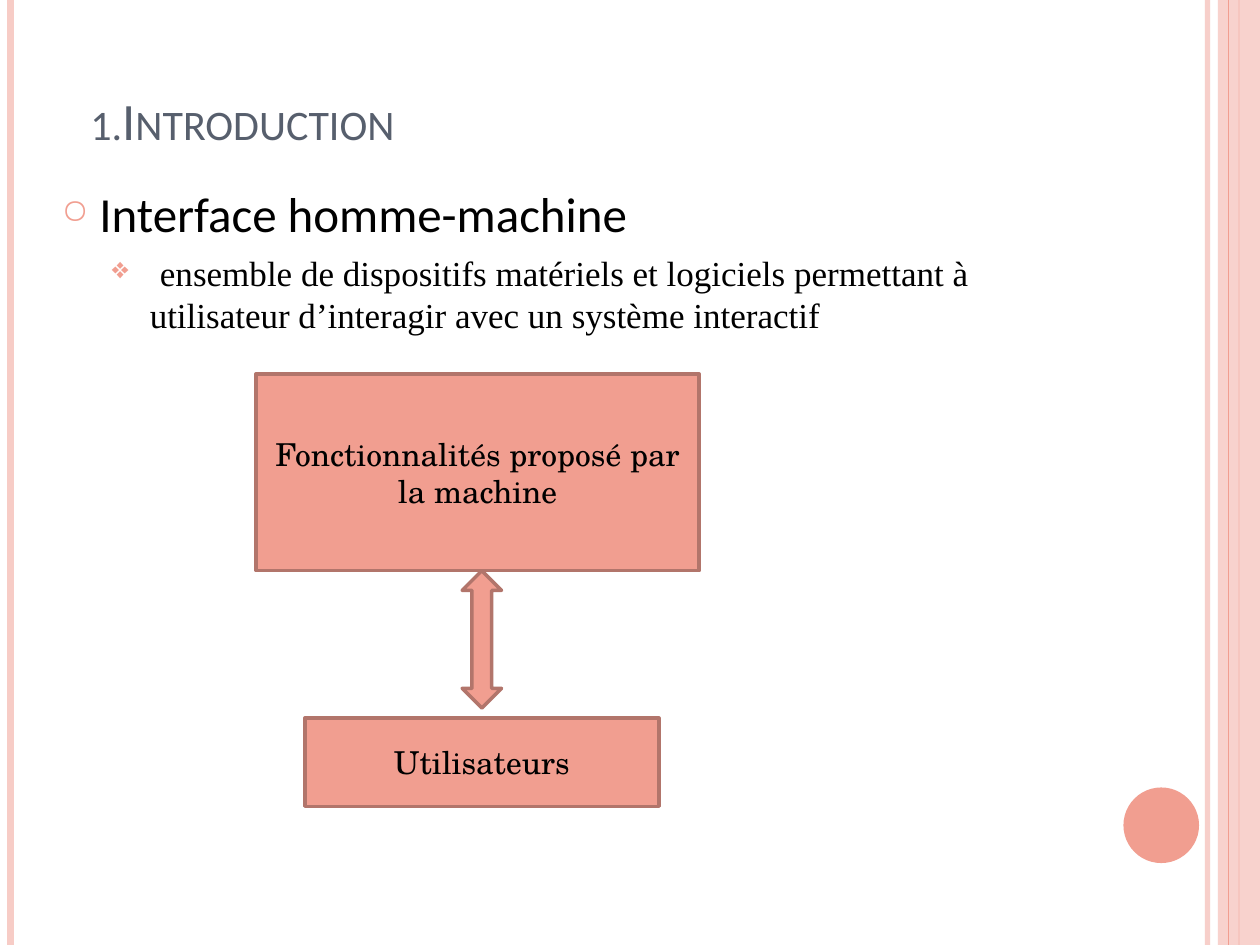
from dataclasses import dataclass
from typing import NamedTuple

import pptx
import pptx.dml.color
import pptx.enum.shapes
import pptx.enum.text
import pptx.oxml.ns
import pptx.util
from lxml import etree

Pt = pptx.util.Pt
RGB = pptx.dml.color.RGBColor.from_string
Shapes = pptx.enum.shapes.MSO_SHAPE
Anchor = pptx.enum.text.MSO_ANCHOR
qn = pptx.oxml.ns.qn


@dataclass(frozen=True)
class Theme:
    coral: str = "F19E90"
    pale: str = "F7CCC6"
    outline: str = "B2756B"
    heading: str = "575F6D"
    ink: str = "000000"
    white: str = "FFFFFF"
    sans: str = "Calibri"
    serif: str = "Times New Roman"
    school: str = "TeX Gyre Schola"
    title_size: int = 30
    topic_size: int = 28
    detail_size: int = 20
    gap_size: int = 21
    label_size: int = 18


class Box(NamedTuple):
    left: float
    top: float
    width: float
    height: float

    def lengths(self):
        return [Pt(value) for value in self]


THEME = Theme()


def add_element(parent, tag, **attributes):
    return etree.SubElement(parent, qn(tag), attributes)


def set_opacity(fill_parent, percent):
    color = next(fill_parent.iter(qn("a:srgbClr")))
    add_element(color, "a:alpha", val=str(percent * 1000))


def add_span(para, text, font, size, color):
    span = para.add_run()
    span.text = text
    span.font.name = font
    span.font.size = Pt(size)
    span.font.color.rgb = RGB(color)
    return span


def add_panel(page, kind, box, fill, outline=None):
    panel = page.shapes.add_shape(kind, *box.lengths())
    panel.shadow.inherit = False
    panel.fill.solid()
    panel.fill.fore_color.rgb = RGB(fill)
    if outline:
        panel.line.color.rgb = RGB(outline)
        panel.line.width = Pt(2)
    else:
        panel.line.fill.background()
    return panel


def add_rule(page, box, x, color, width):
    """Draw a vertical line down the full height of the box."""
    left = Pt(box.left + x)
    rule = page.shapes.add_connector(
        pptx.enum.shapes.MSO_CONNECTOR.STRAIGHT,
        left, Pt(box.top), left, Pt(box.top + box.height))
    rule.line.color.rgb = RGB(color)
    rule.line.width = Pt(width)
    add_element(rule._element.spPr, "a:effectLst")
    return rule


def add_frame(page, box):
    """Draw the striped side borders and the corner disc."""
    inner = add_rule(page, box, 690, THEME.pale, 3)
    set_opacity(inner._element.spPr, 93)
    add_rule(page, box, 6, THEME.pale, 4.5)
    add_rule(page, box, 708, THEME.coral, 1.5)
    band_box = Box(box.left + 696, box.top, box.width - 696, box.height)
    band = add_panel(page, Shapes.RECTANGLE, band_box, THEME.pale)
    set_opacity(band._element.spPr, 87)
    add_rule(page, box, 702, THEME.coral, 0.75)
    disc_box = Box(box.left + 642, box.top + 450, 43.2, 43.2)
    add_panel(page, Shapes.OVAL, disc_box, THEME.coral)


def add_text_frame(page, box, anchor):
    frame = page.shapes.add_textbox(*box.lengths()).text_frame
    frame.word_wrap = True
    frame.vertical_anchor = anchor
    return frame


def add_title(page, box):
    para = add_text_frame(page, box, Anchor.BOTTOM).paragraphs[0]
    span = add_span(para, "1.Introduction", THEME.sans, THEME.title_size, THEME.heading)
    span.font._element.set("cap", "small")


def set_bullet(para, symbol, margin, percent):
    properties = para._p.get_or_add_pPr()
    properties.set("marL", str(Pt(margin)))
    properties.set("indent", str(Pt(-21.6)))
    color = add_element(properties, "a:buClr")
    add_element(color, "a:srgbClr", val=THEME.coral)
    add_element(properties, "a:buSzPct", val=str(percent * 1000))
    add_element(properties, "a:buChar", char=symbol)


def add_definition(page, box):
    frame = add_text_frame(page, box, Anchor.TOP)
    topic = frame.paragraphs[0]
    topic.space_before = Pt(6)
    set_bullet(topic, "○", 21.6, 70)
    add_span(topic, "Interface homme-machine", THEME.sans, THEME.topic_size, THEME.ink)

    detail = frame.add_paragraph()
    detail.level = 1
    detail.space_before = Pt(4)
    set_bullet(detail, "❖", 50.4, 80)
    add_span(detail, " ", THEME.school, THEME.gap_size, THEME.ink)
    add_span(detail, "ensemble de dispositifs matériels et logiciels permettant à "
             "utilisateur d’interagir avec un système interactif",
             THEME.serif, THEME.detail_size, THEME.ink)


def add_labelled_panel(page, box, label):
    panel = add_panel(page, Shapes.RECTANGLE, box, THEME.coral, THEME.outline)
    frame = panel.text_frame
    frame.word_wrap = True
    frame.vertical_anchor = Anchor.MIDDLE
    para = frame.paragraphs[0]
    para.alignment = pptx.enum.text.PP_ALIGN.CENTER
    add_span(para, label, THEME.school, THEME.label_size, THEME.ink)


def add_diagram(page, box):
    """Link the machine's functions to its users with a two-way arrow."""
    machine = Box(box.left, box.top, box.width, 112.3)
    users = Box(box.left + 28, box.top + box.height - 50.4, 202.3, 50.4)
    arrow_width = 22.5
    arrow = Box(users.left + (users.width - arrow_width) / 2,
                machine.top + machine.height, arrow_width, 78.5)
    add_labelled_panel(page, machine, "Fonctionnalités proposé par la machine")
    add_labelled_panel(page, users, "Utilisateurs")
    add_panel(page, Shapes.UP_DOWN_ARROW, arrow, THEME.coral, THEME.outline)


def main():
    deck = pptx.Presentation()
    deck.slide_width, deck.slide_height = Pt(720), Pt(540)
    page = deck.slides.add_slide(deck.slide_layouts[6])
    page.background.fill.solid()
    page.background.fill.fore_color.rgb = RGB(THEME.white)
    add_frame(page, Box(0, 0, 720, 540))
    add_title(page, Box(44.6, 21.6, 578.9, 68.4))
    add_definition(page, Box(28.1, 101.5, 596.2, 408.2))
    add_diagram(page, Box(146.2, 213.8, 253.4, 247))
    deck.save("out.pptx")


if __name__ == "__main__":
    main()
